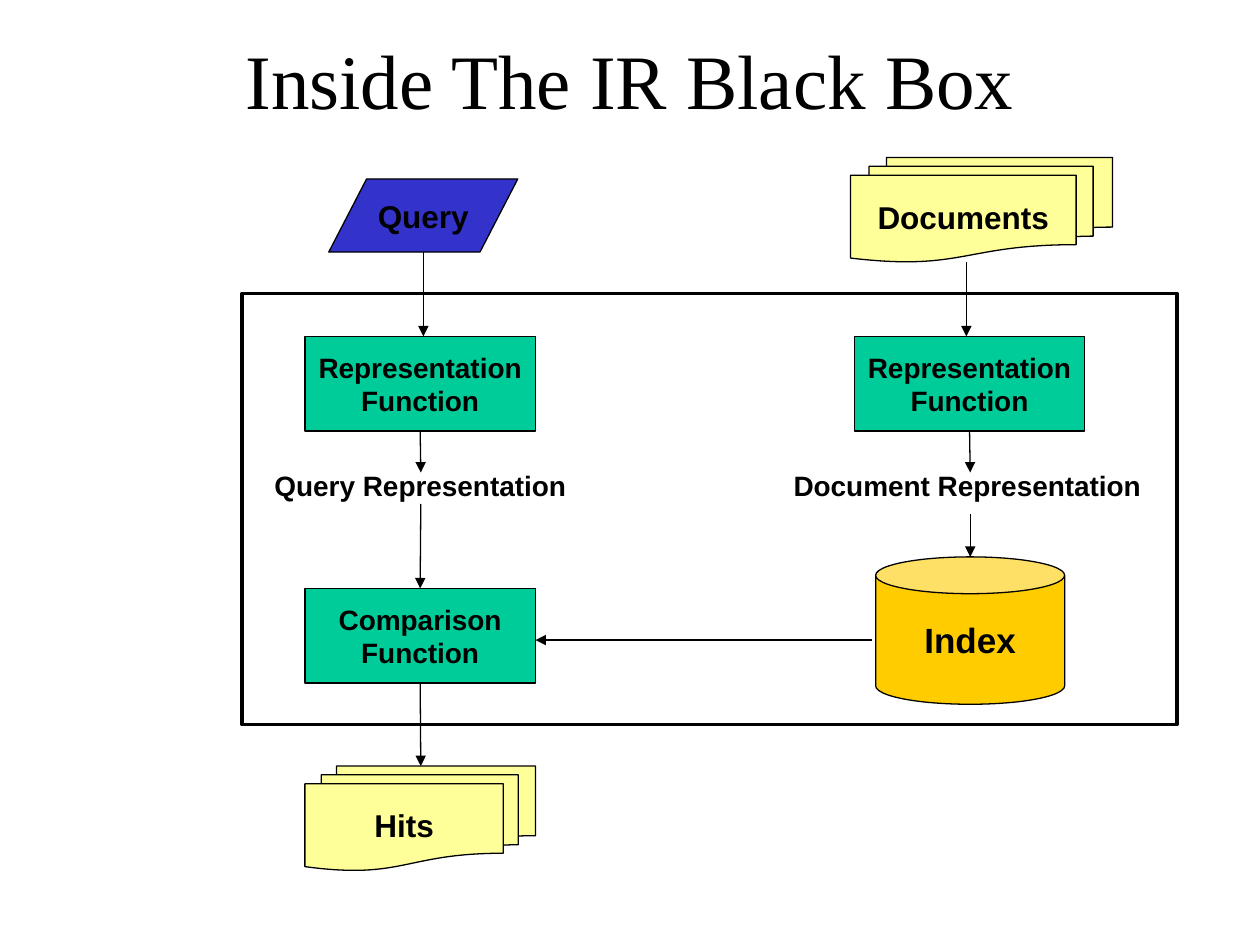
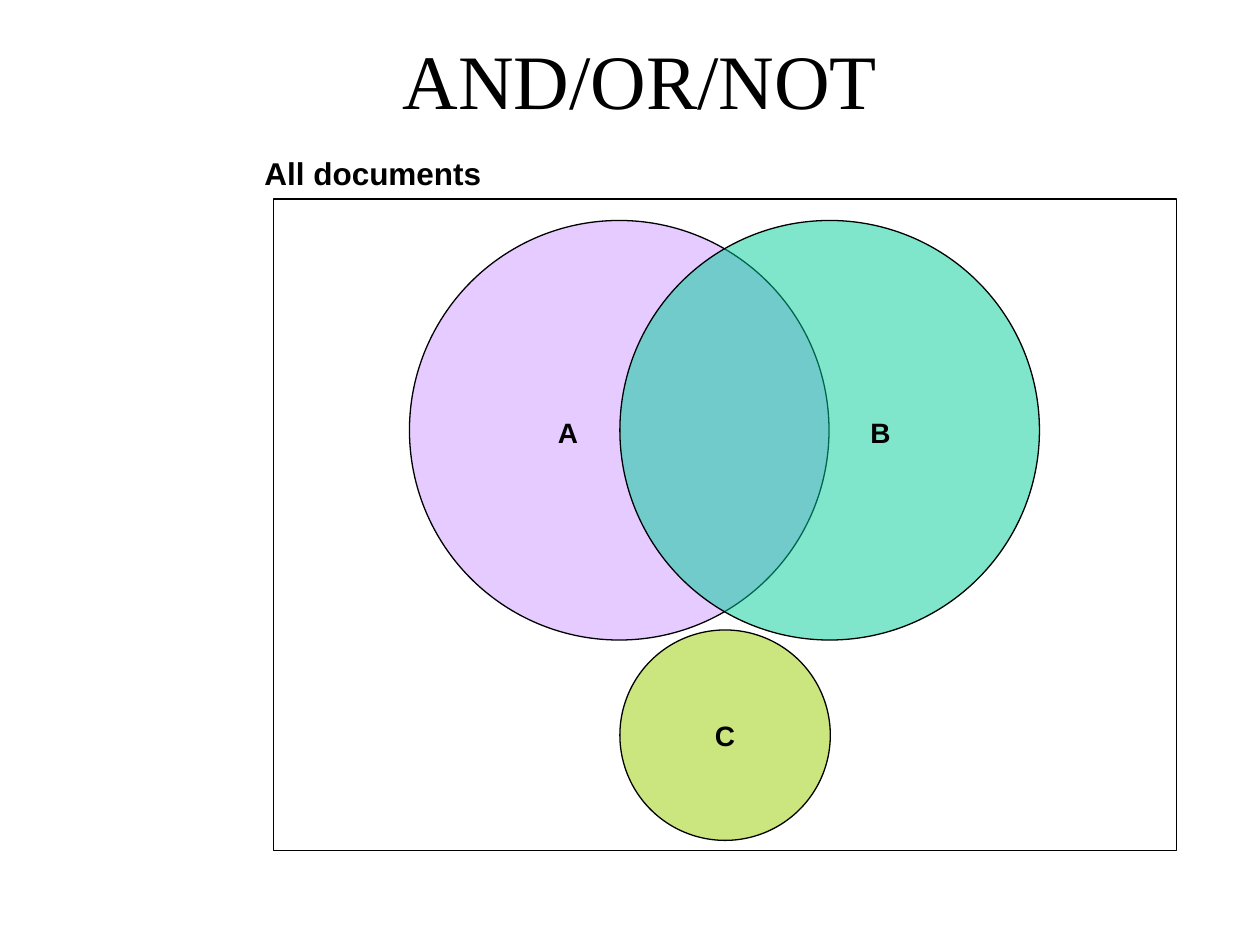
from lxml.etree import SubElement
from pptx import Presentation
from pptx.dml.color import RGBColor
from pptx.enum.shapes import MSO_CONNECTOR, MSO_SHAPE
from pptx.enum.text import MSO_ANCHOR, MSO_AUTO_SIZE, PP_ALIGN
from pptx.oxml.ns import qn
from pptx.util import Inches, Pt

BLACK, YELLOW, BLUE = "000000", "FFFF99", "3333CC"
GREEN, GOLD, PURPLE, LIME = "00CC99", "FFCC00", "CC99FF", "99CC00"
TITLE = {"name": "Times New Roman", "size": Pt(44), "bold": False}
LABEL = {"name": "Arial", "size": Pt(16), "bold": True}
LARGE = {**LABEL, "size": Pt(18)}
HUGE = {**LABEL, "size": Pt(20)}


def rgb(code):
    return RGBColor.from_string(code)


def place(*box):
    return [Inches(value) for value in box]


def write(frame, text, style, align):
    frame.text = text
    for para in frame.paragraphs:
        para.alignment = align
        for key, value in style.items():
            setattr(para.font, key, value)
        para.font.color.rgb = rgb(BLACK)


def add_page(deck, text, left):
    page = deck.slides.add_slide(deck.slide_layouts[5])
    title = page.shapes.title
    title.left, title.top, title.width, title.height = place(left, 0, 8.5, 1.25)
    write(title.text_frame, text, TITLE, PP_ALIGN.CENTER)
    title.text_frame.vertical_anchor = MSO_ANCHOR.MIDDLE
    title.text_frame.auto_size = MSO_AUTO_SIZE.NONE
    return page


def add_node(page, kind, box, fill=None, text="", style=LABEL, width=0.75, alpha=None):
    """Draw an outlined shape; alpha is the opacity in percent."""
    node = page.shapes.add_shape(kind, *place(*box))
    node.shadow.inherit = False
    node.line.color.rgb = rgb(BLACK)
    node.line.width = Pt(width)
    if fill:
        node.fill.solid()
        node.fill.fore_color.rgb = rgb(fill)
    else:
        node.fill.background()
    if alpha:
        color = node.element.spPr.find(qn("a:solidFill")).find(qn("a:srgbClr"))
        SubElement(color, qn("a:alpha")).set("val", str(alpha * 1000))
    if text:
        frame = node.text_frame
        frame.word_wrap = False
        frame.vertical_anchor = MSO_ANCHOR.MIDDLE
        write(frame, text, style, PP_ALIGN.CENTER)
    return node


def add_label(page, text, box, style=LABEL):
    frame = page.shapes.add_textbox(*place(*box)).text_frame
    frame.word_wrap = False
    frame.auto_size = MSO_AUTO_SIZE.SHAPE_TO_FIT_TEXT
    write(frame, text, style, PP_ALIGN.LEFT)


def add_arrow(page, start, end, source=None, target=None):
    """Point from start to end, joined below source or above target."""
    arrow = page.shapes.add_connector(MSO_CONNECTOR.STRAIGHT, *place(*start, *end))
    if source:
        arrow.begin_connect(source, 2)
    if target:
        arrow.end_connect(target, 0)
    arrow.line.color.rgb = rgb(BLACK)
    arrow.line.width = Pt(0.75)
    SubElement(arrow.line._get_or_add_ln(), qn("a:tailEnd")).set("type", "triangle")
    SubElement(arrow.element.spPr, qn("a:effectLst"))


def add_task(page, x, y, text):
    return add_node(page, MSO_SHAPE.RECTANGLE, (x, y, 1.83, 0.75), GREEN, text)


def draw_query(page, x, y):
    """Query column, from the query down to its hits."""
    mid = x + 0.92
    add_node(page, MSO_SHAPE.FLOWCHART_DATA, (x + 0.19, y, 1.5, 0.58), BLUE, "Query", LARGE)
    represent = add_task(page, x, y + 1.25, "Representation\nFunction")
    add_label(page, "Query Representation", (x - 0.34, y + 2.25, 2.52, 0.37))
    compare = add_task(page, x, y + 3.25, "Comparison\nFunction")
    add_node(page, MSO_SHAPE.FLOWCHART_MULTIDOCUMENT, (x, y + 4.66, 1.83, 0.83),
             YELLOW, "Hits", LARGE)
    add_arrow(page, (x + 0.94, y + 0.58), (x + 0.94, y + 1.25))
    add_arrow(page, (mid, y + 2), (mid, y + 2.33), source=represent)
    add_arrow(page, (mid, y + 2.58), (mid, y + 3.25), target=compare)
    add_arrow(page, (mid, y + 4), (mid, y + 4.66), source=compare)


def draw_docs(page, x, y):
    """Document column, from the documents down to the index."""
    mid = x + 0.92
    add_node(page, MSO_SHAPE.FLOWCHART_MULTIDOCUMENT, (x - 0.03, y, 2.08, 0.83),
             YELLOW, "Documents", LARGE)
    represent = add_task(page, x, y + 1.42, "Representation\nFunction")
    add_label(page, "Document Representation", (x - 0.58, y + 2.42, 2.97, 0.37))
    index = add_node(page, MSO_SHAPE.CAN, (x + 0.17, y + 3.17, 1.5, 1.17), GOLD, "Index", HUGE)
    index.adjustments[0] = 0.25
    add_arrow(page, (x + 0.89, y + 0.83), (x + 0.89, y + 1.42))
    add_arrow(page, (mid, y + 2.17), (mid, y + 2.5), source=represent)
    add_arrow(page, (mid, y + 2.83), (mid, y + 3.17))


def draw_flow(page, x, y, wide, high):
    """Both columns around the black box."""
    draw_query(page, x + 0.5, y - 0.91)
    draw_docs(page, x + 4.86, y - 1.08)
    add_arrow(page, (x + 5, y + 2.75), (x + 2.33, y + 2.75))
    add_node(page, MSO_SHAPE.RECTANGLE, (x, y, wide, high), width=2)


def draw_sets(page, x, y, wide, high):
    """Overlapping sets within the frame of all documents."""
    big, small = 3.33, 1.67
    add_node(page, MSO_SHAPE.RECTANGLE, (x, y, wide, high))
    for left, fill in ((1.08, PURPLE), (2.75, GREEN)):
        add_node(page, MSO_SHAPE.OVAL, (x + left, y + 0.17, big, big), fill, alpha=50)
    for name, left in (("A", 2.16), ("B", 4.64)):
        add_label(page, name, (x + left, y + 1.67, 0.36, 0.37))
    add_label(page, "All documents", (x - 0.17, y - 0.41, 1.92, 0.4), LARGE)
    add_node(page, MSO_SHAPE.OVAL, (x + 2.75, y + 3.42, small, small), LIME, "C", alpha=50)


def main():
    deck = Presentation()
    deck.slide_width, deck.slide_height = place(10, 7.5)
    draw_flow(add_page(deck, "Inside The IR Black Box", 0.75), 1.92, 2.33, 7.42, 3.42)
    draw_sets(add_page(deck, "AND/OR/NOT", 0.83), 2.17, 1.58, 7.17, 5.17)
    deck.save("out.pptx")


if __name__ == "__main__":
    main()
